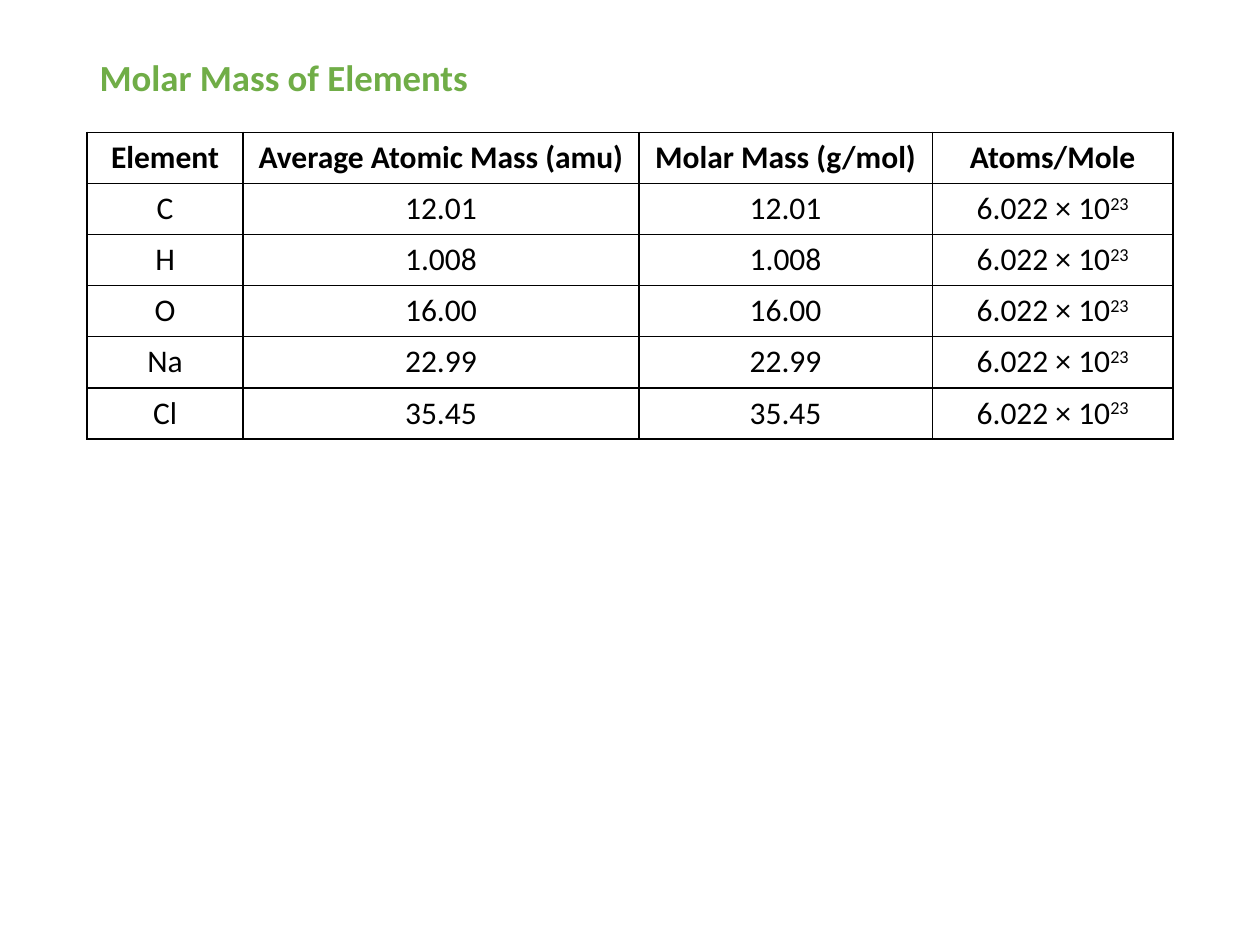
from dataclasses import dataclass

from lxml import etree
from pptx import Presentation
from pptx.dml.color import RGBColor
from pptx.enum import text
from pptx.oxml import ns
from pptx.util import Inches, Pt


@dataclass(frozen=True)
class Theme:
    font: str = "Calibri"
    title_size: int = 21
    table_size: int = 18
    title: str = "70AD47"
    ink: str = "000000"
    paper: str = "FFFFFF"
    border: int = 1


THEME = Theme()
LEFT, WIDTH = 0.69, 8.62
COLUMN_WIDTHS = [1.24, 3.14, 2.33, 1.91]
ROW_HEIGHT = 0.405
HEADINGS = ["Element", "Average Atomic Mass (amu)", "Molar Mass (g/mol)", "Atoms/Mole"]
MASSES = {"C": "12.01", "H": "1.008", "O": "16.00", "Na": "22.99", "Cl": "35.45"}
AVOGADRO = ("6.022 × 10", "23")


def style_paragraph(paragraph, size, color, bold, align):
    paragraph.alignment = align
    font = paragraph.font
    font.name = THEME.font
    font.size = Pt(size)
    font.bold = bold
    font.color.rgb = RGBColor.from_string(color)


def add_title(slide, wording):
    title = slide.shapes.title
    title.left, title.top = Inches(LEFT), Inches(0.4)
    title.width, title.height = Inches(WIDTH), Inches(0.46)
    frame = title.text_frame
    frame.text = wording
    frame.vertical_anchor = text.MSO_ANCHOR.MIDDLE
    frame.auto_size = text.MSO_AUTO_SIZE.NONE
    heading = frame.paragraphs[0]
    heading.line_spacing = 0.9
    style_paragraph(heading, THEME.title_size, THEME.title, True, text.PP_ALIGN.LEFT)


def add_borders(cell):
    properties = cell._tc.get_or_add_tcPr()
    for side in ("lnL", "lnR", "lnT", "lnB"):
        line = etree.SubElement(properties, ns.qn(f"a:{side}"), w=str(Pt(THEME.border)))
        fill = etree.SubElement(line, ns.qn("a:solidFill"))
        etree.SubElement(fill, ns.qn("a:srgbClr"), val=THEME.ink)


def fill_cell(cell, wording, exponent="", bold=False):
    add_borders(cell)
    cell.fill.solid()
    cell.fill.fore_color.rgb = RGBColor.from_string(THEME.paper)
    paragraph = cell.text_frame.paragraphs[0]
    style_paragraph(paragraph, THEME.table_size, THEME.ink, bold, text.PP_ALIGN.CENTER)
    paragraph.add_run().text = wording
    if exponent:
        power = paragraph.add_run()
        power.text = exponent
        power._r.get_or_add_rPr().set("baseline", "30000")


def add_mass_table(slide):
    rows = [[(heading,) for heading in HEADINGS]]
    rows += [[(element,), (mass,), (mass,), AVOGADRO] for element, mass in MASSES.items()]
    table = slide.shapes.add_table(
        len(rows), len(HEADINGS), Inches(LEFT), Inches(1.05),
        Inches(WIDTH), Inches(ROW_HEIGHT * len(rows)),
    ).table
    for column, width in zip(table.columns, COLUMN_WIDTHS):
        column.width = Inches(width)
    for r, row in enumerate(rows):
        for c, content in enumerate(row):
            fill_cell(table.cell(r, c), *content, bold=r == 0)


def main():
    deck = Presentation()
    deck.slide_width, deck.slide_height = Inches(10), Inches(7.5)
    slide = deck.slides.add_slide(deck.slide_layouts[5])
    add_title(slide, "Molar Mass of Elements")
    add_mass_table(slide)
    deck.save("out.pptx")


if __name__ == "__main__":
    main()
